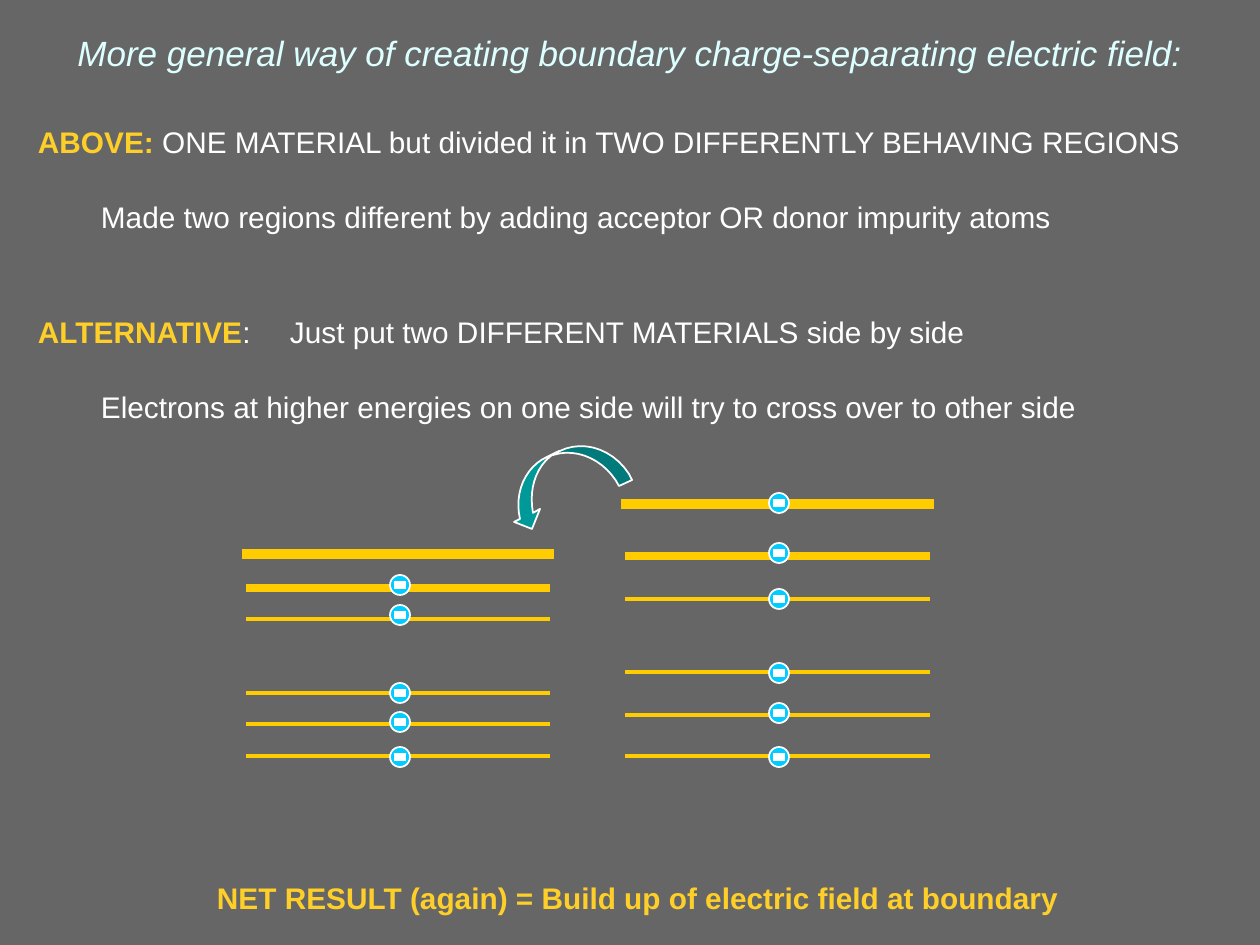
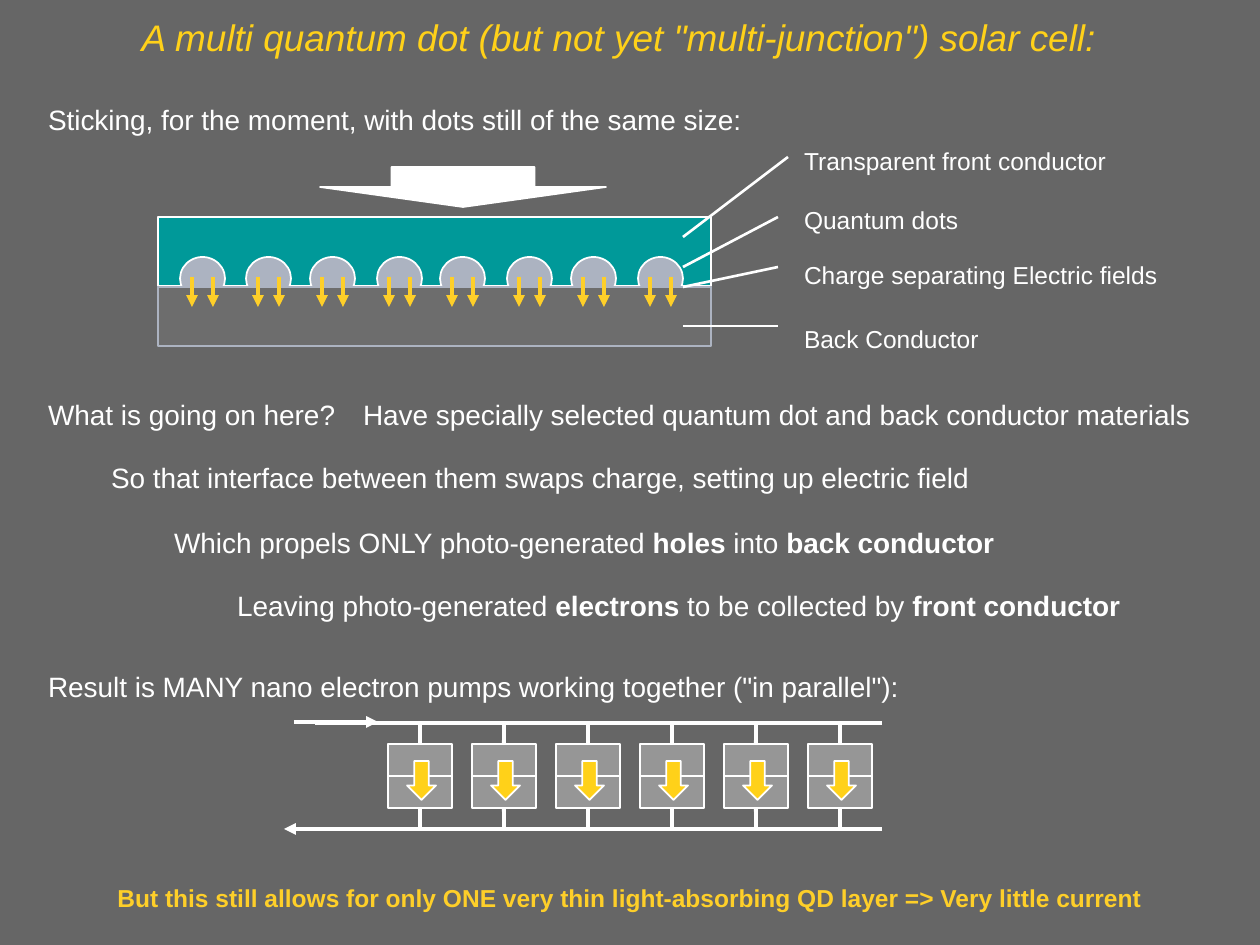
"""Two slides on charge separation: unlike materials and a quantum dot solar cell."""
from dataclasses import dataclass

from lxml.etree import SubElement
from pptx import Presentation
from pptx.dml.color import RGBColor
from pptx.enum.shapes import MSO_CONNECTOR as LINK, MSO_SHAPE as SHAPE
from pptx.enum.text import MSO_ANCHOR as ANCHOR, PP_ALIGN as ALIGN
from pptx.oxml.ns import qn
from pptx.util import Emu, Pt

PX = 914400 / 126
INSET = 6
LINE_HEIGHT = 1.149


@dataclass(frozen=True)
class Theme:
    """Colours, font and type sizes."""
    back: str = "666666"
    text: str = "FFFFFF"
    ice: str = "DEFFFF"
    gold: str = "FECF29"
    amber: str = "FFD119"
    level: str = "FFCC00"
    electron: str = "00CCFF"
    teal: str = "009999"
    dark_teal: str = "007A7A"
    dot: str = "ACB3C1"
    conductor: str = "6D6D6D"
    cell: str = "969696"
    font: str = "Arial"
    title: float = 20
    dot_title: float = 21.1
    body: float = 17
    detail: float = 16
    label: float = 14
    hairline: float = 1
    leader: float = 1.5
    wire: float = 2.25
    dash: float = 4.5


T = Theme()
BOLD = {"bold": True}
KEY = {"bold": True, "color": T.gold}

BOUNDARY = {
    "title": ("More general way of creating boundary charge-separating electric field:",
              (42, 10, 1176, 84), T.title, T.ice),
    "left": 32, "width": 1212,
    "lines": [
        {"y": 141, "size": T.body, "runs": [
            ("ABOVE:", KEY),
            (" ONE MATERIAL but divided it in TWO DIFFERENTLY BEHAVING REGIONS", {})]},
        {"y": 214, "size": T.body, "indent": 63, "runs": [
            ("Made two regions different by adding acceptor OR donor impurity atoms", {})]},
        {"y": 328, "size": T.body, "tab": 229, "runs": [
            ("ALTERNATIVE", KEY),
            (":\tJust put two DIFFERENT MATERIALS side by side", {})]},
        {"y": 401, "size": T.body, "indent": 63, "runs": [
            ("Electrons at higher energies on one side will try to cross over to other side", {})]},
        {"y": 891, "size": T.body, "align": ALIGN.CENTER, "runs": [
            ("NET RESULT (again) = Build up of electric field at boundary", KEY)]},
    ],
}

QUANTUM_DOTS = {
    "title": ('A multi quantum dot (but not yet "multi-junction") solar cell:',
              (21, 10, 1197, 53), T.dot_title, T.amber),
    "left": 42, "width": 1176,
    "lines": [
        {"y": 119, "size": T.detail, "runs": [
            ("Sticking, for the moment, with dots still of the same size:", {})]},
        *({"y": y, "size": T.label, "indent": 756, "runs": [(part, {})]} for y, part in [
            (159, "Transparent front conductor"), (216, "Quantum dots"),
            (270, "Charge separating Electric fields"), (333, "Back Conductor")]),
        {"y": 407, "size": T.detail, "tab": 315, "runs": [
            ("What is going on here?\tHave specially selected quantum dot "
             "and back conductor materials", {})]},
        {"y": 469, "size": T.detail, "indent": 63, "runs": [
            ("So that interface between them swaps charge, setting up electric field", {})]},
        {"y": 532, "size": T.detail, "indent": 126, "runs": [
            ("Which propels ONLY photo-generated ", {}), ("holes", BOLD),
            (" into ", {}), ("back conductor", BOLD)]},
        {"y": 594, "size": T.detail, "indent": 189, "runs": [
            ("Leaving photo-generated ", {}), ("electrons", BOLD),
            (" to be collected by ", {}), ("front conductor", BOLD)]},
        {"y": 674, "size": T.detail, "runs": [
            ('Result is MANY nano electron pumps working together ("in parallel"):', {})]},
        {"y": 884, "size": T.label, "align": ALIGN.CENTER, "runs": [
            ("But this still allows for only ONE very thin light-absorbing QD layer "
             "=> Very little current", KEY)]},
    ],
}

# fmt: off
MATERIALS = [
    {"start": 625, "end": 930, "electron_x": 779, "levels": [
        (756, 2.25, 757), (715, 2.25, 713), (672, 2.25, 673),
        (599, 2.25, 599), (556, 4.5, 553), (504, 6, 503)]},
    {"start": 246, "end": 550, "electron_x": 400, "levels": [
        (756, 2.25, 757), (724, 2.25, 722), (693, 2.25, 693),
        (619, 2.25, 615), (588, 4.5, 585), (554, 6, None)]},
]
# fmt: on
CROSSING_HEAD = [(559, 451), [(538, 461), (528, 486), (533, 513)], (540, 509), (532, 529),
                 (514, 522), (520, 519), [(514, 493), (525, 467), (547, 457)]]
CROSSING_TAIL = [(619, 486), [(606, 461), (578, 447), (553, 455)],
                 [(577, 438), (611, 446), (629, 474)], (632, 480)]

DOT_LEFTS = [180, 246, 310, 377, 440, 507, 571, 638]
FIELD_OFFSETS = [12, 33]
LEADERS = [((683, 237), (788, 157)), ((683, 267), (778, 217)),
           ((683, 287), (778, 267)), ((683, 326), (778, 326))]
RAIL_TOP, RAIL_BOTTOM = 723, 829
RAILS = [((882, RAIL_TOP), (315, RAIL_TOP), False), ((294, 722), (378, 722), True),
         ((882, RAIL_BOTTOM), (284, RAIL_BOTTOM), True)]
PUMP_LEFTS = [388 + 84 * i for i in range(6)]


def px(length):
    return Emu(round(length * PX))


def rgb(color):
    return RGBColor.from_string(color)


def add_run(paragraph, text, size, style):
    run = paragraph.add_run()
    run.text = text
    look = {"name": T.font, "size": Pt(size), "bold": False, **style}
    run.font.color.rgb = rgb(look.pop("color", T.text))
    for key, value in look.items():
        setattr(run.font, key, value)


def add_frame(slide, box, anchor):
    frame = slide.shapes.add_textbox(*map(px, box)).text_frame
    margins = {f"margin_{side}": px(INSET) for side in ("left", "top", "right", "bottom")}
    for key, value in {"word_wrap": True, "vertical_anchor": anchor, **margins}.items():
        setattr(frame, key, value)
    return frame


def add_title(slide, text, box, size, color):
    heading = add_frame(slide, box, ANCHOR.MIDDLE).paragraphs[0]
    heading.alignment = ALIGN.CENTER
    add_run(heading, text, size, {"italic": True, "color": color})


def add_body(slide, left, width, lines):
    heights = [line["size"] * LINE_HEIGHT * 126 / 72 for line in lines]
    top = lines[0]["y"] - heights[0] / 2
    bottom = lines[-1]["y"] + heights[-1] / 2
    frame = add_frame(slide, (left, top - INSET, width, bottom - top + 2 * INSET), ANCHOR.TOP)
    previous_end = top
    for i, (line, height) in enumerate(zip(lines, heights)):
        paragraph = frame.paragraphs[0] if i == 0 else frame.add_paragraph()
        properties = paragraph._p.get_or_add_pPr()
        properties.set("marL", str(px(line.get("indent", 0))))
        properties.set("indent", "0")
        if "tab" in line:
            stops = SubElement(properties, qn("a:tabLst"))
            SubElement(stops, qn("a:tab"), pos=str(px(line["tab"])), algn="l")
        paragraph.alignment = line.get("align", ALIGN.LEFT)
        if i:
            paragraph.space_before = px(line["y"] - height / 2 - previous_end)
        for text, style in line["runs"]:
            add_run(paragraph, text, line["size"], style)
        previous_end = line["y"] + height / 2


def paint(shape, fill, line=T.text):
    shape.shadow.inherit = False
    shape.fill.solid()
    shape.fill.fore_color.rgb = rgb(fill)
    shape.line.color.rgb = rgb(line)
    shape.line.width = Pt(T.hairline)
    return shape


def add_part(slide, kind, box, fill, line=T.text):
    return paint(slide.shapes.add_shape(kind, *map(px, box)), fill, line)


def add_line(slide, start, end, color, weight, arrow=False):
    link = slide.shapes.add_connector(LINK.STRAIGHT, *map(px, (*start, *end)))
    link.line.color.rgb = rgb(color)
    link.line.width = Pt(weight)
    if arrow:
        SubElement(link.line._get_or_add_ln(), qn("a:tailEnd"), type="triangle")
    SubElement(link._element.spPr, qn("a:effectLst"))
    return link


def trace(outline, steps=12):
    points = [outline[0]]
    for piece in outline[1:]:
        if isinstance(piece, tuple):
            points.append(piece)
            continue
        curve = [points[-1], *piece]
        for t in (step / steps for step in range(1, steps + 1)):
            weights = ((1 - t) ** 3, 3 * t * (1 - t) ** 2, 3 * t * t * (1 - t), t ** 3)
            points.append(tuple(sum(w * p[axis] for w, p in zip(weights, curve))
                                for axis in (0, 1)))
    return points


def add_outline(slide, outline, fill):
    start, *rest = [tuple(map(px, point)) for point in trace(outline)]
    builder = slide.shapes.build_freeform(*start)
    builder.add_line_segments(rest, close=True)
    paint(builder.convert_to_shape(), fill)


def draw_material(slide, start, end, electron_x, levels):
    for y, weight, _ in levels:
        overhang = 4 if weight == 6 else 0
        add_line(slide, (start - overhang, y), (end + overhang, y), T.level, weight)
    for _, _, y in levels:
        if y is not None:
            add_part(slide, SHAPE.OVAL, (electron_x - 10, y - 10, 20, 20), T.electron)
            add_line(slide, (electron_x - 6, y), (electron_x + 6, y), T.text, T.dash)


def draw_boundary(slide):
    for material in MATERIALS:
        draw_material(slide, **material)
    add_outline(slide, CROSSING_HEAD, T.teal)
    add_outline(slide, CROSSING_TAIL, T.dark_teal)


def draw_solar_cell(slide):
    add_part(slide, SHAPE.RECTANGLE, (158, 217, 553, 69), T.teal)
    add_part(slide, SHAPE.DOWN_ARROW, (320, 167, 286, 40), T.text)
    for left in DOT_LEFTS:
        add_part(slide, SHAPE.OVAL, (left, 257, 45, 43), T.dot)
    add_part(slide, SHAPE.RECTANGLE, (158, 287, 553, 59), T.conductor, T.dot)
    for x in (left + offset for left in DOT_LEFTS for offset in FIELD_OFFSETS):
        add_line(slide, (x, 277), (x, 307), T.gold, T.wire, arrow=True)
    for start, end in LEADERS:
        add_line(slide, start, end, T.text, T.leader)


def draw_pumps(slide):
    for start, end, arrow in RAILS:
        add_line(slide, start, end, T.text, T.wire, arrow)
    for left in PUMP_LEFTS:
        middle = left + 32
        upper, lower = (add_part(slide, SHAPE.RECTANGLE, (left, top, 64, 32), T.cell)
                        for top in (744, 776))
        add_part(slide, SHAPE.DOWN_ARROW, (left + 19, 761, 29, 39), T.amber)
        for half, side, edge, rail in ((upper, 0, 744, RAIL_TOP), (lower, 2, 808, RAIL_BOTTOM)):
            wire = add_line(slide, (middle, edge), (middle, rail), T.text, T.wire)
            wire.begin_connect(half, side)


def draw_quantum_dots(slide):
    draw_solar_cell(slide)
    draw_pumps(slide)


def main():
    deck = Presentation()
    deck.slide_width, deck.slide_height = px(1260), px(945)
    for content, draw in ((BOUNDARY, draw_boundary), (QUANTUM_DOTS, draw_quantum_dots)):
        slide = deck.slides.add_slide(deck.slide_layouts[6])
        slide.background.fill.solid()
        slide.background.fill.fore_color.rgb = rgb(T.back)
        add_title(slide, *content["title"])
        add_body(slide, content["left"], content["width"], content["lines"])
        draw(slide)
    deck.save("out.pptx")


if __name__ == "__main__":
    main()
